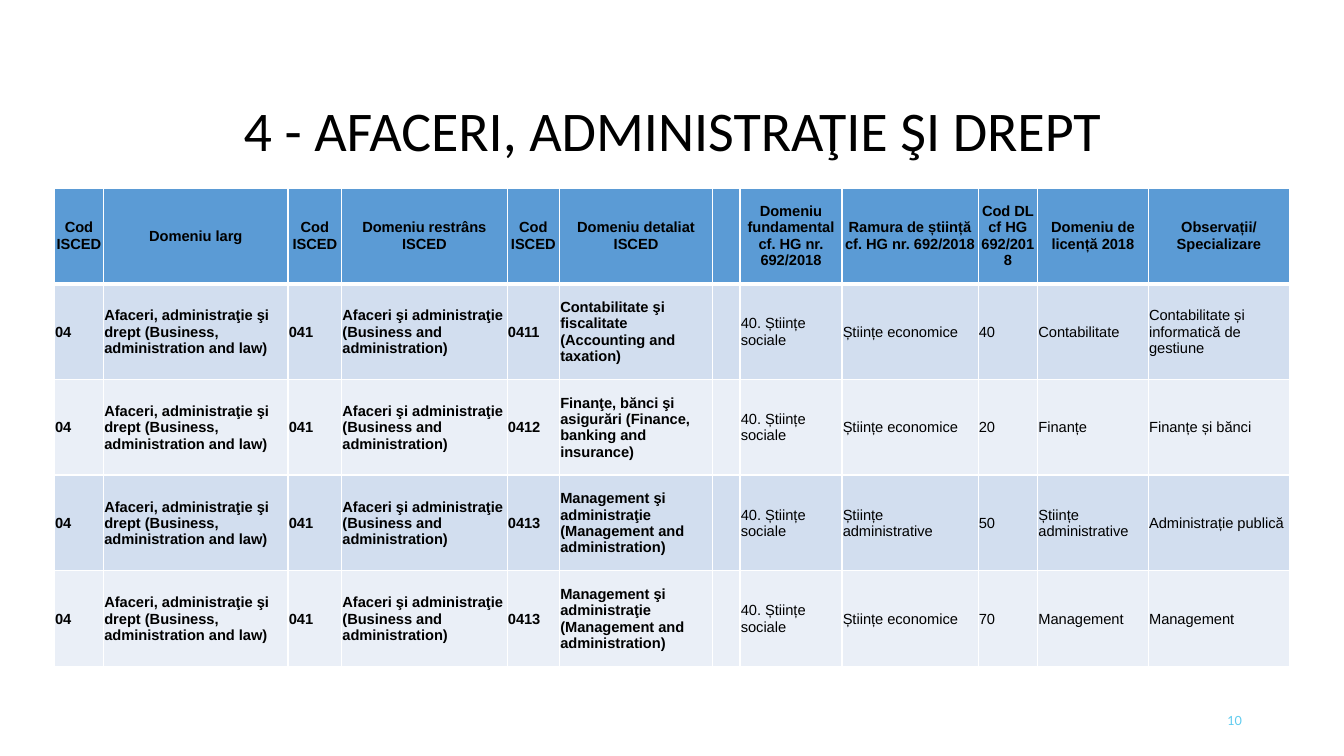
import pptx
import pptx.dml.color
import pptx.enum.text
import pptx.oxml
import pptx.oxml.ns
import pptx.util
from pptx.util import Cm

COLOURS = {
    "text": "000000",
    "header": "5B9BD5",
    "odd": "D2DEEF",
    "even": "EAEFF7",
    "border": "FFFFFF",
    "number": "5FCBEF",
}
ALIGN = pptx.enum.text.PP_ALIGN
MIDDLE = pptx.enum.text.MSO_ANCHOR.MIDDLE

COLUMN_WIDTHS = [1.24, 4.65, 1.35, 4.17, 1.32, 3.86, 0.69, 2.57, 3.43, 1.5, 2.79, 3.56]
ROW_HEIGHT = 2.41
BOLD_COLUMNS = 6

HEADERS = [
    "Cod ISCED", "Domeniu larg", "Cod ISCED", "Domeniu restrâns ISCED",
    "Cod ISCED", "Domeniu detaliat ISCED", "",
    "Domeniu fundamental cf. HG nr. 692/2018", "Ramura de știință cf. HG nr. 692/2018",
    "Cod DL cf HG 692/2018", "Domeniu de licență 2018", "Observații/ Specializare",
]
BROAD_FIELD = [
    "04", "Afaceri, administraţie şi drept (Business, administration and law)",
    "041", "Afaceri şi administraţie (Business and administration)",
]
SOCIAL = ["", "40. Științe sociale"]
ECONOMICS = "Științe economice"
ADMINISTRATIVE = "Științe administrative"
MANAGEMENT = ["0413", "Management şi administraţie (Management and administration)"]
DETAILS = [
    (["0411", "Contabilitate şi fiscalitate (Accounting and taxation)"],
     [ECONOMICS, "40", "Contabilitate", "Contabilitate și informatică de gestiune"]),
    (["0412", "Finanţe, bănci şi asigurări (Finance, banking and insurance)"],
     [ECONOMICS, "20", "Finanțe", "Finanțe și bănci"]),
    (MANAGEMENT, [ADMINISTRATIVE, "50", ADMINISTRATIVE, "Administrație publică"]),
    (MANAGEMENT, [ECONOMICS, "70", "Management", "Management"]),
]


def colour(name):
    return pptx.dml.color.RGBColor.from_string(COLOURS[name])


def write(frame, text, *, font, size, shade="text", bold=False, align=ALIGN.LEFT, spacing=None):
    frame.word_wrap = True
    para = frame.paragraphs[0]
    para.alignment = align
    if spacing:
        para.line_spacing = spacing
    para.font.size = pptx.util.Pt(size)
    if text:
        span = para.add_run()
        span.text = text
        span.font.name = font
        span.font.size = pptx.util.Pt(size)
        span.font.bold = bold
        span.font.color.rgb = colour(shade)


class Page:
    def __init__(self, deck):
        self.slide = deck.slides.add_slide(deck.slide_layouts[5])
        self.table_font = "Arial"
        self.table_size = 10.5

    def title(self, text, left, top, width, height):
        box = self.slide.shapes.title
        box.left, box.top, box.width, box.height = Cm(left), Cm(top), Cm(width), Cm(height)
        box.text_frame.vertical_anchor = MIDDLE
        box.text_frame.auto_size = pptx.enum.text.MSO_AUTO_SIZE.NONE
        write(box.text_frame, text, font="Calibri", size=40, align=ALIGN.CENTER, spacing=0.9)

    def number(self, text, left, top, width, height):
        box = self.slide.shapes.add_textbox(Cm(left), Cm(top), Cm(width), Cm(height))
        box.text_frame.vertical_anchor = MIDDLE
        write(box.text_frame, text, font="Lato", size=9, shade="number", align=ALIGN.RIGHT)

    def borders(self, cell, widths):
        properties = cell._tc.get_or_add_tcPr()
        for side, width in widths.items():
            properties.append(pptx.oxml.parse_xml(
                f'<a:ln{side} {pptx.oxml.ns.nsdecls("a")} w="{pptx.util.Pt(width)}">'
                f'<a:solidFill><a:srgbClr val="{COLOURS["border"]}"/></a:solidFill></a:ln{side}>'
            ))

    def cell(self, cell, text, row, column):
        header = row == 0
        inset = Cm(0 if header else 0.02)
        cell.margin_left = cell.margin_right = cell.margin_top = inset
        cell.margin_bottom = 0
        cell.vertical_anchor = MIDDLE
        self.borders(cell, {"L": 1, "R": 1, "T": 3 if row == 1 else 1, "B": 3 if header else 1})
        cell.fill.solid()
        cell.fill.fore_color.rgb = colour("header" if header else "odd" if row % 2 else "even")
        write(cell.text_frame, text, font=self.table_font, size=self.table_size,
              bold=header or column < BOLD_COLUMNS,
              align=ALIGN.CENTER if header else ALIGN.LEFT)

    def table(self, rows, left, top):
        frame = self.slide.shapes.add_table(
            len(rows), len(COLUMN_WIDTHS), Cm(left), Cm(top),
            Cm(sum(COLUMN_WIDTHS)), Cm(ROW_HEIGHT * len(rows)))
        grid = frame.table
        for column, width in zip(grid.columns, COLUMN_WIDTHS):
            column.width = Cm(width)
        for row, texts in enumerate(rows):
            grid.rows[row].height = Cm(ROW_HEIGHT)
            for column, text in enumerate(texts):
                self.cell(grid.cell(row, column), text, row, column)


def main():
    deck = pptx.Presentation()
    deck.slide_width, deck.slide_height = Cm(33.87), Cm(19.05)
    page = Page(deck)
    rows = [HEADERS] + [BROAD_FIELD + field + SOCIAL + licence for field, licence in DETAILS]
    page.table(rows, 1.37, 4.74)
    page.number("10", 23.93, 17.65, 7.62, 1.02)
    page.title("4 - AFACERI, ADMINISTRAŢIE ŞI DREPT", 2.34, 2.44, 29.21, 1.83)
    deck.save("out.pptx")


if __name__ == "__main__":
    main()
